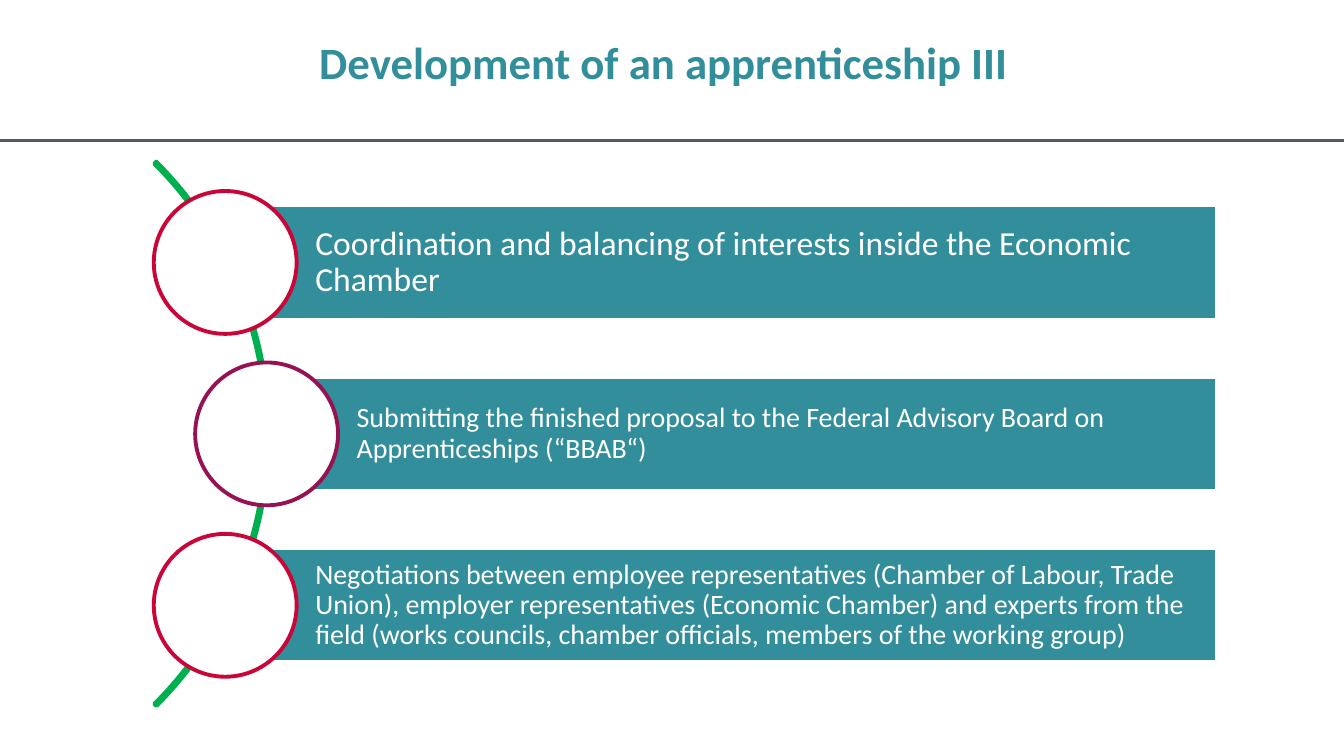
from dataclasses import dataclass

from lxml import etree
from pptx import Presentation
from pptx import util as u
from pptx.dml.color import RGBColor
from pptx.enum import shapes, text
from pptx.oxml.ns import qn

WIDTH = u.Inches(10)
HEIGHT = u.Emu(WIDTH * 9 // 16)
COLOURS = {
    "teal": "338E9C",
    "white": "FFFFFF",
    "slate": "4C5D68",
    "green": "00B050",
    "red": "CA0538",
    "purple": "961253",
}
FONT = "Calibri"
OUTLINE = 2.08
MIDDLE, PITCH = 57.4, 22.68
BAR_RIGHT, BAR_HEIGHT = 90.55, 15.12
CIRCLE, ARC = 10.63, 57.3


@dataclass
class Step:
    wording: str
    centre: float
    size: float
    inset: float
    ring: str


STEPS = [
    Step("Coordination and balancing of interests inside the Economic Chamber",
         16.76, 18, 0.05, "red"),
    Step("Submitting the finished proposal to the Federal Advisory Board on "
         "Apprenticeships (“BBAB“)", 19.84, 15, 0.04, "purple"),
    Step("Negotiations between employee representatives (Chamber of Labour, Trade Union), "
         "employer representatives (Economic Chamber) and experts from the field "
         "(works councils, chamber officials, members of the working group)",
         16.76, 15, 0.04, "red"),
]


def across(percent: float) -> int:
    return round(WIDTH * percent / 100)


def down(percent: float) -> int:
    return round(HEIGHT * percent / 100)


def colour(name: str) -> RGBColor:
    return RGBColor.from_string(COLOURS[name])


def add_outlined(slide, kind, left: int, top: int, width: int, height: int,
                 line: str, fill: str | None = None):
    shape = slide.shapes.add_shape(kind, left, top, width, height)
    shape.shadow.inherit = False
    if fill:
        shape.fill.solid()
        shape.fill.fore_color.rgb = colour(fill)
    else:
        shape.fill.background()
    shape.line.color.rgb = colour(line)
    shape.line.width = u.Pt(OUTLINE)
    return shape


def format_text(shape, wording: str, size: float, ink: str, spacing,
                insets: tuple, anchor, bold: bool = False) -> None:
    frame = shape.text_frame
    frame.text = wording
    frame.word_wrap = True
    frame.auto_size = text.MSO_AUTO_SIZE.NONE
    frame.vertical_anchor = anchor
    frame.margin_left, frame.margin_top, frame.margin_right, frame.margin_bottom = (
        u.Inches(inset) for inset in insets)
    paragraph = frame.paragraphs[0]
    paragraph.alignment = text.PP_ALIGN.LEFT
    paragraph.line_spacing = spacing
    font = paragraph.runs[0].font
    font.name, font.size, font.bold = FONT, u.Pt(size), bold
    font.color.rgb = colour(ink)


def add_title(slide) -> None:
    title = slide.shapes.title
    title.left, title.top = across(23.75), down(4.35)
    title.width, title.height = across(52.5), down(12.1)
    format_text(title, "Development of an apprenticeship III", 24, "teal", u.Pt(30),
                (0, 0, 0, 0), text.MSO_ANCHOR.TOP, bold=True)


def add_rule(slide) -> None:
    rule = slide.shapes.add_connector(
        shapes.MSO_CONNECTOR.STRAIGHT, WIDTH, down(18.55), 0, down(18.55))
    rule.line.color.rgb = colour("slate")
    rule.line.width = u.Pt(1.5)
    etree.SubElement(rule._element.spPr, qn("a:effectLst"))


def add_arc(slide) -> None:
    side = across(ARC)
    arc = add_outlined(slide, shapes.MSO_SHAPE.BLOCK_ARC, across(-37.27),
                       down(MIDDLE) - side // 2, side, side, "green")
    for index, value in enumerate((189, 27, 0.004)):
        arc.adjustments[index] = value


def add_step(slide, row: int, step: Step) -> None:
    centre_x = across(step.centre)
    centre_y = down(MIDDLE + (row - 1) * PITCH)
    height, side = down(BAR_HEIGHT), across(CIRCLE)
    bar = add_outlined(slide, shapes.MSO_SHAPE.RECTANGLE, centre_x, centre_y - height // 2,
                       across(BAR_RIGHT) - centre_x, height, "white", "teal")
    format_text(bar, step.wording, step.size, "white", 0.9,
                (0.67, step.inset, step.inset, step.inset), text.MSO_ANCHOR.MIDDLE)
    add_outlined(slide, shapes.MSO_SHAPE.OVAL, centre_x - side // 2, centre_y - side // 2,
                 side, side, step.ring, "white")


def main() -> None:
    presentation = Presentation()
    presentation.slide_width, presentation.slide_height = WIDTH, HEIGHT
    slide = presentation.slides.add_slide(presentation.slide_layouts[5])
    add_title(slide)
    add_rule(slide)
    add_arc(slide)
    for row, step in enumerate(STEPS):
        add_step(slide, row, step)
    presentation.save("out.pptx")


if __name__ == "__main__":
    main()
